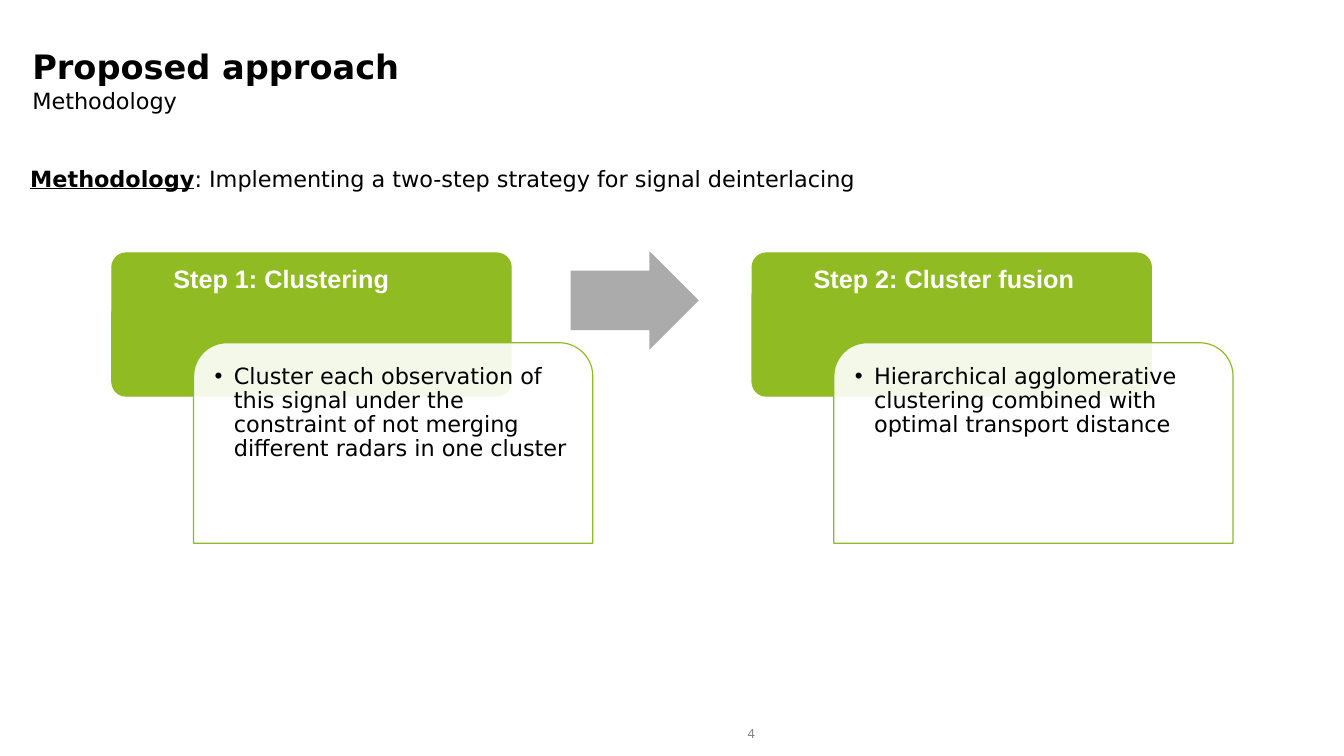
from dataclasses import dataclass

from lxml import etree
from pptx import Presentation
from pptx.dml.color import RGBColor
from pptx.enum.shapes import MSO_SHAPE
from pptx.enum.text import MSO_ANCHOR, MSO_AUTO_SIZE, PP_ALIGN
from pptx.oxml.ns import qn
from pptx.util import Inches, Pt

ROUND = MSO_SHAPE.ROUNDED_RECTANGLE
TAB = MSO_SHAPE.ROUND_2_SAME_RECTANGLE
ARROW = MSO_SHAPE.RIGHT_ARROW
TOP = MSO_ANCHOR.TOP
MIDDLE = MSO_ANCHOR.MIDDLE
LEFT = PP_ALIGN.LEFT
CENTER = PP_ALIGN.CENTER
FIXED = MSO_AUTO_SIZE.NONE

GREEN, GREY, WHITE, BLACK = "90BB23", "ABABAB", "FFFFFF", "000000"
SANS = "DejaVu Sans"
FIRST, PITCH = 1.11, 6.35


@dataclass
class Box:
    left: float
    top: float
    width: float
    height: float

    def size(self) -> list:
        return [Inches(n) for n in (self.left, self.top, self.width, self.height)]


@dataclass
class Step:
    head: str
    note: str


STEPS = [
    Step("Step 1: Clustering",
         "Cluster each observation of this signal under the constraint "
         "of not merging different radars in one cluster"),
    Step("Step 2: Cluster fusion",
         "Hierarchical agglomerative clustering combined with "
         "optimal transport distance"),
]


def paint(target, color: str) -> None:
    target.solid()
    target.fore_color.rgb = RGBColor.from_string(color)


def style(run, size: float, color: str = BLACK, face: str = SANS,
          bold: bool = False, under: bool = False) -> None:
    font = run.font
    font.name, font.size = face, Pt(size)
    font.bold, font.underline = bold, under
    paint(font.fill, color)


def frame(shape, pads: tuple, anchor=TOP):
    text = shape.text_frame
    text.word_wrap = True
    text.auto_size = FIXED
    text.vertical_anchor = anchor
    text.margin_left, text.margin_top, text.margin_right, text.margin_bottom = (
        Inches(pad) for pad in pads)
    return text


def place(shape, box: Box) -> None:
    shape.left, shape.top, shape.width, shape.height = box.size()


def bullet(para, indent: float, mark: str = "") -> None:
    props = para._p.get_or_add_pPr()
    props.set("marL", str(Inches(indent)))
    props.set("indent", str(-Inches(indent)))
    if mark:
        etree.SubElement(props, qn("a:buFont")).set("typeface", "Arial")
        etree.SubElement(props, qn("a:buChar")).set("char", mark)
    else:
        etree.SubElement(props, qn("a:buNone"))


def label(slide, box: Box, words: str, pads: tuple, anchor=TOP):
    text = frame(slide.shapes.add_textbox(*box.size()), pads, anchor)
    text.text = words
    return text.paragraphs[0]


def block(slide, kind, box: Box, fill: str, line: str = ""):
    shape = slide.shapes.add_shape(kind, *box.size())
    shape.shadow.inherit = False
    paint(shape.fill, fill)
    if line:
        paint(shape.line.fill, line)
        shape.line.width = Pt(0.85)
    else:
        shape.line.fill.background()
    return shape


def draw_step(slide, step: Step, left: float) -> None:
    card = block(slide, ROUND, Box(left, 2.51, 3.96, 1.42), GREEN, GREEN)
    card.adjustments[0] = 0.1
    head = label(slide, Box(left + 0.47, 2.51, 3.01, 0.94), step.head,
                 (0.14, 0.14, 0.14, 0.07))
    head.line_spacing = 0.9
    style(head.runs[0], 18, WHITE, "Arial", bold=True)

    panel = block(slide, TAB, Box(left + 0.81, 3.4, 3.96, 1.99), WHITE, GREEN)
    tint = panel.fill._xPr.find(qn("a:solidFill"))[0]
    etree.SubElement(tint, qn("a:alpha")).set("val", "90000")
    note = label(slide, Box(left + 0.9, 3.5, 3.76, 1.89), step.note, (0.12,) * 4)
    note.line_spacing = 0.9
    bullet(note, 0.19, "•")
    style(note.runs[0], 16)


def draw_title(slide) -> None:
    title = slide.shapes.title
    place(title, Box(0.22, 0.41, 12.74, 0.83))
    text = frame(title, (0.1, 0.05, 0.1, 0.05))
    text.text = "Proposed approach\vMethodology"
    para = text.paragraphs[0]
    para.alignment = LEFT
    main, sub = para.runs
    style(main, 24, bold=True)
    style(sub, 16)
    gap = para._p.find(qn("a:br"))
    etree.SubElement(gap, qn("a:rPr")).set("sz", "2400")


def draw_lead(slide) -> None:
    body = slide.placeholders[1]
    place(body, Box(0.2, 1.59, 12.75, 0.58))
    text = frame(body, (0.1, 0.05, 0.1, 0.05))
    text.text = "Methodology"
    para = text.paragraphs[0]
    para.space_before = Pt(0)
    bullet(para, 0)
    style(para.runs[0], 16, bold=True, under=True)
    rest = para.add_run()
    rest.text = ": Implementing a two-step strategy for signal deinterlacing"
    style(rest, 16)


def main() -> None:
    deck = Presentation()
    deck.slide_width, deck.slide_height = Inches(13.33), Inches(7.5)
    slide = deck.slides.add_slide(deck.slide_layouts[1])
    draw_title(slide)
    draw_lead(slide)
    for rank, step in enumerate(STEPS):
        draw_step(slide, step, FIRST + rank * PITCH)
    arrow = block(slide, ARROW, Box(5.66, 2.49, 1.27, 0.98), GREY)
    arrow.adjustments[0] = 0.6
    page = label(slide, Box(7, 7.15, 0.9, 0.26), "4",
                 (0.11, 0.05, 0.11, 0.05), MIDDLE)
    page.alignment = CENTER
    style(page.runs[0], 9, "818181", "Noto Sans")
    deck.save("out.pptx")


if __name__ == "__main__":
    main()
